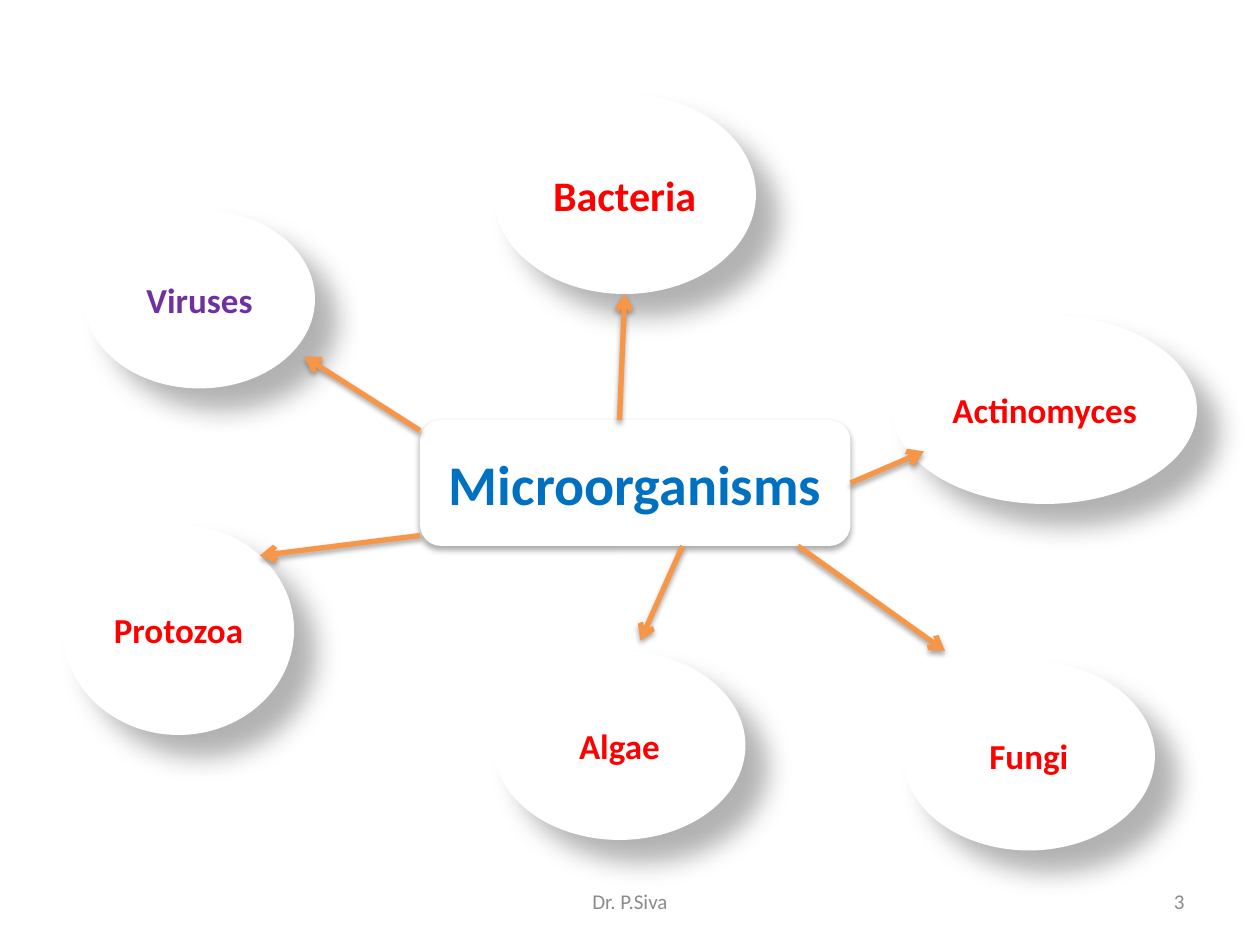
from lxml.etree import SubElement
from pptx import Presentation
from pptx.dml.color import RGBColor
from pptx.enum.shapes import MSO_CONNECTOR, MSO_SHAPE
from pptx.enum.text import MSO_ANCHOR, PP_ALIGN
from pptx.oxml.ns import qn
from pptx.util import Pt

WHITE = RGBColor(0xFF, 0xFF, 0xFF)
BLUE = RGBColor(0x00, 0x70, 0xC0)
RED = RGBColor(0xFF, 0x00, 0x00)
PURPLE = RGBColor(0x70, 0x30, 0xA0)
ORANGE = RGBColor(0xF7, 0x96, 0x46)
GRAY = RGBColor(0x8C, 0x8C, 0x8C)


def write_text(shape, text, size=20, color=RED, bold=True, align=PP_ALIGN.CENTER):
    frame = shape.text_frame
    frame.word_wrap = True
    frame.vertical_anchor = MSO_ANCHOR.MIDDLE
    paragraph = frame.paragraphs[0]
    paragraph.alignment = align
    run = paragraph.add_run()
    run.text = text
    run.font.name = "Calibri"
    run.font.size = Pt(size)
    run.font.bold = bold
    run.font.color.rgb = color


def add_shadow(shape, opacity, blur, distance, angle):
    effects = SubElement(shape._element.spPr, qn("a:effectLst"))
    shadow = SubElement(
        effects, qn("a:outerShdw"), blurRad=str(Pt(blur)), dist=str(Pt(distance)),
        dir=str(angle * 60000), algn="tl", rotWithShape="0")
    color = SubElement(shadow, qn("a:srgbClr"), val="000000")
    SubElement(color, qn("a:alpha"), val=str(opacity * 1000))


presentation = Presentation()
presentation.slide_width = Pt(720)
presentation.slide_height = Pt(540)
slide = presentation.slides.add_slide(presentation.slide_layouts[6])

center_shadow = (32, 3.5, 2.2, 90)
group_shadow = (30, 15, 18, 45)
arrow_shadow = (35, 3.1, 1.8, 90)

nodes = [
    ("Microorganisms", MSO_SHAPE.ROUNDED_RECTANGLE, (240, 240, 246, 72), 32, BLUE, center_shadow),
    ("Bacteria", MSO_SHAPE.OVAL, (282, 54, 150, 114), 24, RED, group_shadow),
    ("Actinomyces", MSO_SHAPE.OVAL, (510, 180, 174, 108), 20, RED, group_shadow),
    ("Fungi", MSO_SHAPE.OVAL, (516, 378, 144, 108), 20, RED, group_shadow),
    ("Algae", MSO_SHAPE.OVAL, (282, 372, 144, 108), 20, RED, group_shadow),
    ("Protozoa", MSO_SHAPE.OVAL, (36, 300, 132, 120), 20, RED, group_shadow),
    ("Viruses", MSO_SHAPE.OVAL, (48, 120, 132, 102), 20, PURPLE, group_shadow),
]
shapes = {}
for name, kind, box, size, color, shadow in nodes:
    shape = slide.shapes.add_shape(kind, *map(Pt, box))
    shape.fill.solid()
    shape.fill.fore_color.rgb = WHITE
    shape.line.fill.background()
    add_shadow(shape, *shadow)
    write_text(shape, name, size=size, color=color)
    shapes[name] = shape

arrows = {
    "Bacteria": (354, 240, 357, 168),
    "Actinomyces": (486, 276, 528, 258),
    "Fungi": (456, 312, 540, 372),
    "Algae": (390, 312, 366, 366),
    "Protozoa": (240, 306, 148.5, 317.5),
    "Viruses": (240, 246, 174, 204),
}
for name, ends in arrows.items():
    arrow = slide.shapes.add_connector(MSO_CONNECTOR.STRAIGHT, *map(Pt, ends))
    arrow.line.color.rgb = ORANGE
    arrow.line.width = Pt(3)
    SubElement(arrow._element.spPr.find(qn("a:ln")), qn("a:tailEnd"), type="arrow")
    add_shadow(arrow, *arrow_shadow)
    if name == "Actinomyces":
        arrow.begin_connect(shapes["Microorganisms"], 3)

footers = [
    ("3", 516, 168, PP_ALIGN.RIGHT),
    ("Dr. P.Siva", 246, 228, PP_ALIGN.CENTER),
]
for text, left, width, align in footers:
    footer = slide.shapes.add_textbox(Pt(left), Pt(500.5), Pt(width), Pt(28.75))
    write_text(footer, text, size=12, color=GRAY, bold=False, align=align)

presentation.save("out.pptx")
